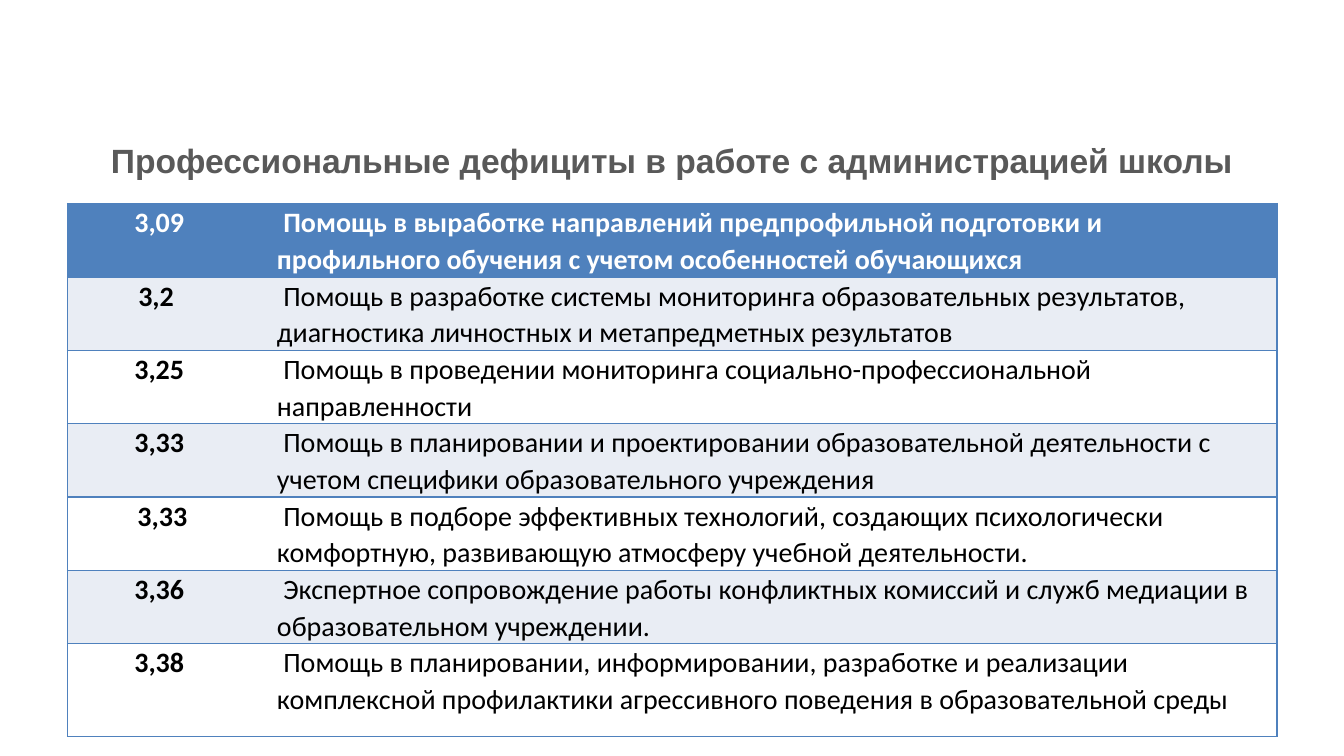
import pptx
import pptx.util
import pptx.dml.color
import pptx.enum.text
import pptx.oxml
import pptx.oxml.ns
from lxml import etree

Pt = pptx.util.Pt
Align = pptx.enum.text.PP_ALIGN
HUES = {"title": "595959", "head": "4F81BD", "band": "E9EDF4",
        "plain": "FFFFFF", "text": "000000"}
SPACE = 4.52
ROWS = [
    ("3,09", 3, "Помощь в выработке направлений предпрофильной подготовки и профильного обучения с учетом особенностей обучающихся"),
    ("3,2", 4, "Помощь в разработке системы мониторинга образовательных результатов, диагностика личностных и метапредметных результатов"),
    ("3,25", 3, "Помощь в проведении мониторинга социально-профессиональной направленности"),
    ("3,33", 3, "Помощь в планировании и проектировании образовательной деятельности с учетом специфики образовательного учреждения"),
    ("3,33", 2, "Помощь в подборе эффективных технологий, создающих психологически комфортную, развивающую атмосферу учебной деятельности."),
    ("3,36", 3, "Экспертное сопровождение работы конфликтных комиссий и служб медиации в образовательном учреждении."),
    ("3,38", 3, "Помощь в планировании, информировании, разработке и реализации комплексной профилактики агрессивного поведения в образовательной среды"),
]


class Deck:
    """Holds the style and the current slide."""

    def __init__(self):
        self.show = pptx.Presentation()
        self.show.slide_width, self.show.slide_height = Pt(960), Pt(540)
        self.slide = self.show.slides.add_slide(self.show.slide_layouts[5])

    def style(self, para, font, size, hue, bold):
        for run in para.runs:
            run.font.name, run.font.size, run.font.bold = font, Pt(size), bold
            run.font.color.rgb = pptx.dml.color.RGBColor.from_string(HUES[hue])

    def title(self, text, left, top, width, height):
        shape = self.slide.shapes.title
        shape.left, shape.top = Pt(left), Pt(top)
        shape.width, shape.height = Pt(width), Pt(height)
        frame = shape.text_frame
        frame.text = text
        frame.word_wrap = True
        frame.vertical_anchor = pptx.enum.text.MSO_ANCHOR.MIDDLE
        para = frame.paragraphs[0]
        para.alignment = Align.CENTER
        self.style(para, "Arial", 24, "title", True)

    def edges(self, cell, drawn):
        props = cell._tc.get_or_add_tcPr()
        for spot, side in enumerate("LRTB"):
            line = etree.Element(pptx.oxml.ns.qn(f"a:ln{side}"), w=str(Pt(1)))
            if side in drawn:
                fill = etree.SubElement(line, pptx.oxml.ns.qn("a:solidFill"))
                etree.SubElement(fill, pptx.oxml.ns.qn("a:srgbClr"), val=HUES["head"])
            else:
                etree.SubElement(line, pptx.oxml.ns.qn("a:noFill"))
            props.insert(spot, line)

    def cell(self, cell, text, fill, hue, bold, align, drawn, pad=0, indent=0):
        cell.margin_left, cell.margin_right = Pt(5), Pt(5 + pad)
        cell.margin_top = cell.margin_bottom = 0
        cell.fill.solid()
        cell.fill.fore_color.rgb = pptx.dml.color.RGBColor.from_string(HUES[fill])
        self.edges(cell, drawn)
        para = cell.text_frame.paragraphs[0]
        para.text = text
        para.alignment, para.line_spacing = align, 1.07
        if indent:
            props = para._p.get_or_add_pPr()
            props.set("marL", "0")
            props.set("indent", str(Pt(indent)))
        self.style(para, "Calibri", 20, hue, bold)

    def table(self, rows, left, top, widths, height, last):
        total = height * (len(rows) - 1) + last
        grid = self.slide.shapes.add_table(
            len(rows), len(widths), Pt(left), Pt(top), Pt(sum(widths)), Pt(total)).table
        for col, width in zip(grid.columns, widths):
            col.width = Pt(width)
        for num, (score, gap, need) in enumerate(rows):
            grid.rows[num].height = Pt(last if num == len(rows) - 1 else height)
            head = num == 0
            fill = "head" if head else ("band" if num % 2 else "plain")
            hue = "plain" if head else "text"
            self.cell(grid.cell(num, 0), score, fill, hue, True,
                      Align.CENTER, "LTB", pad=gap * SPACE)
            self.cell(grid.cell(num, 1), need, fill, hue, head,
                      Align.LEFT, "RTB", indent=SPACE)


def main():
    deck = Deck()
    deck.title("Профессиональные дефициты в работе с администрацией школы",
               49, 82.8, 861.8, 62.6)
    deck.table(ROWS, 48.2, 145.4, (144.7, 719.3), 45.4, 66.2)
    deck.show.save("out.pptx")


if __name__ == "__main__":
    main()
